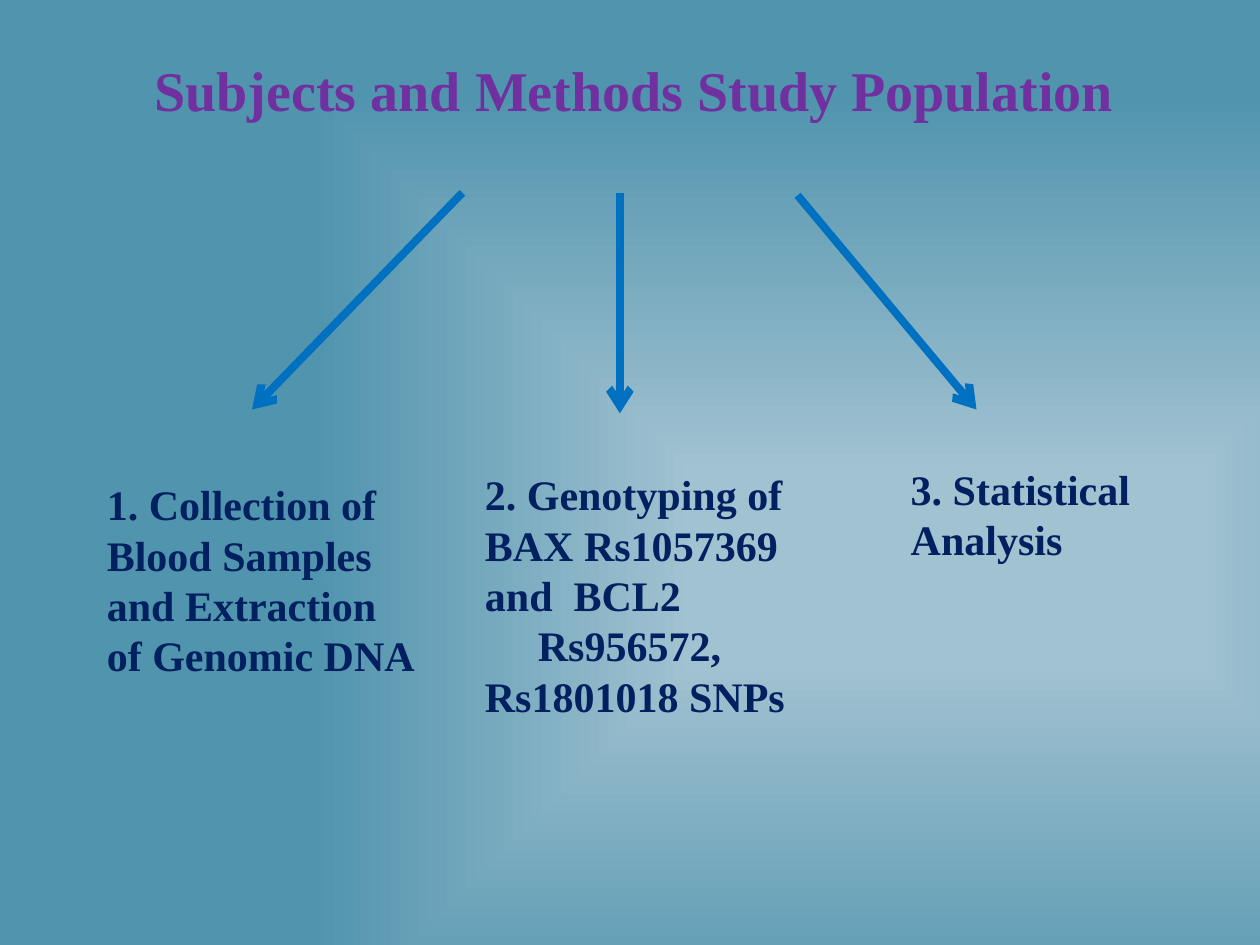
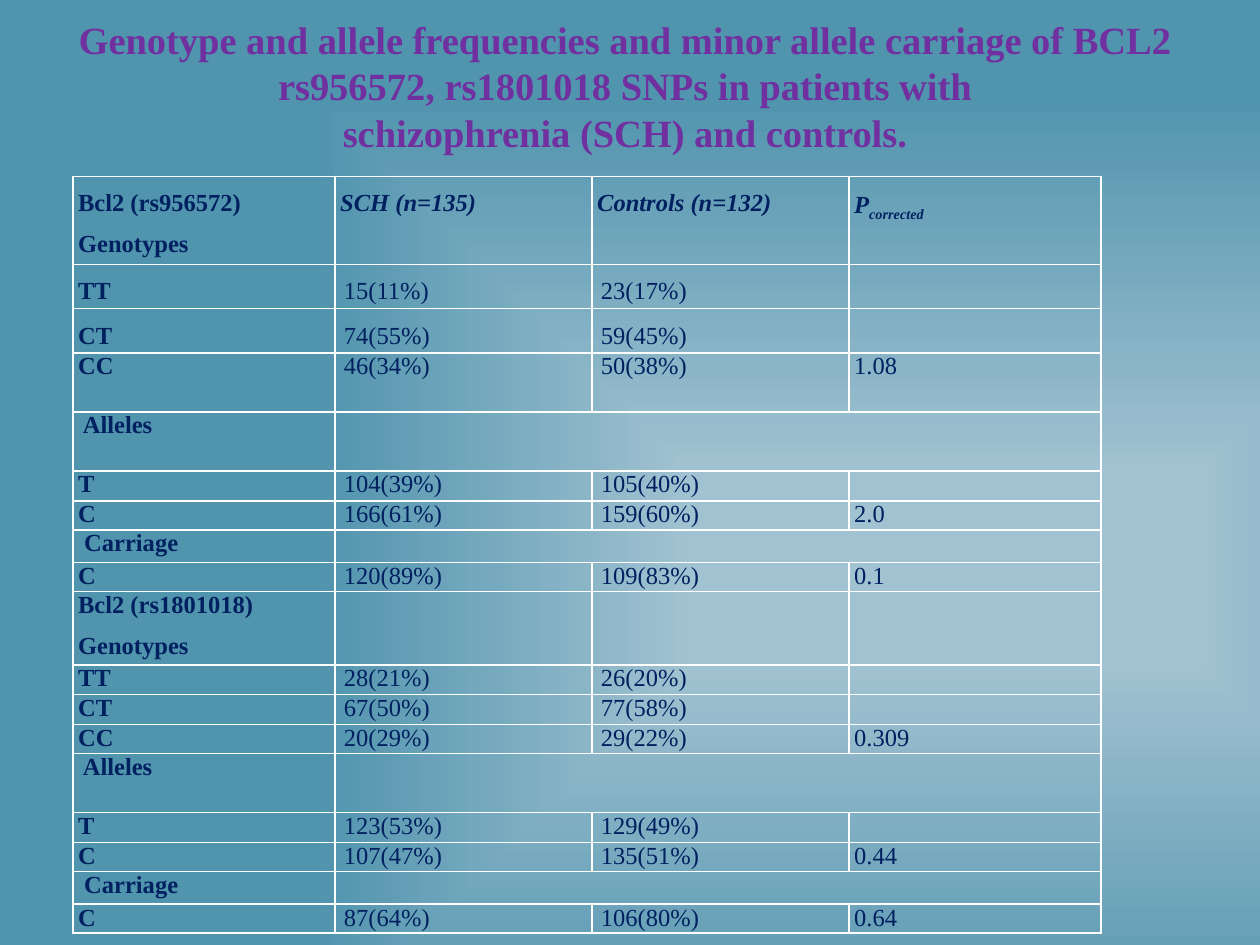
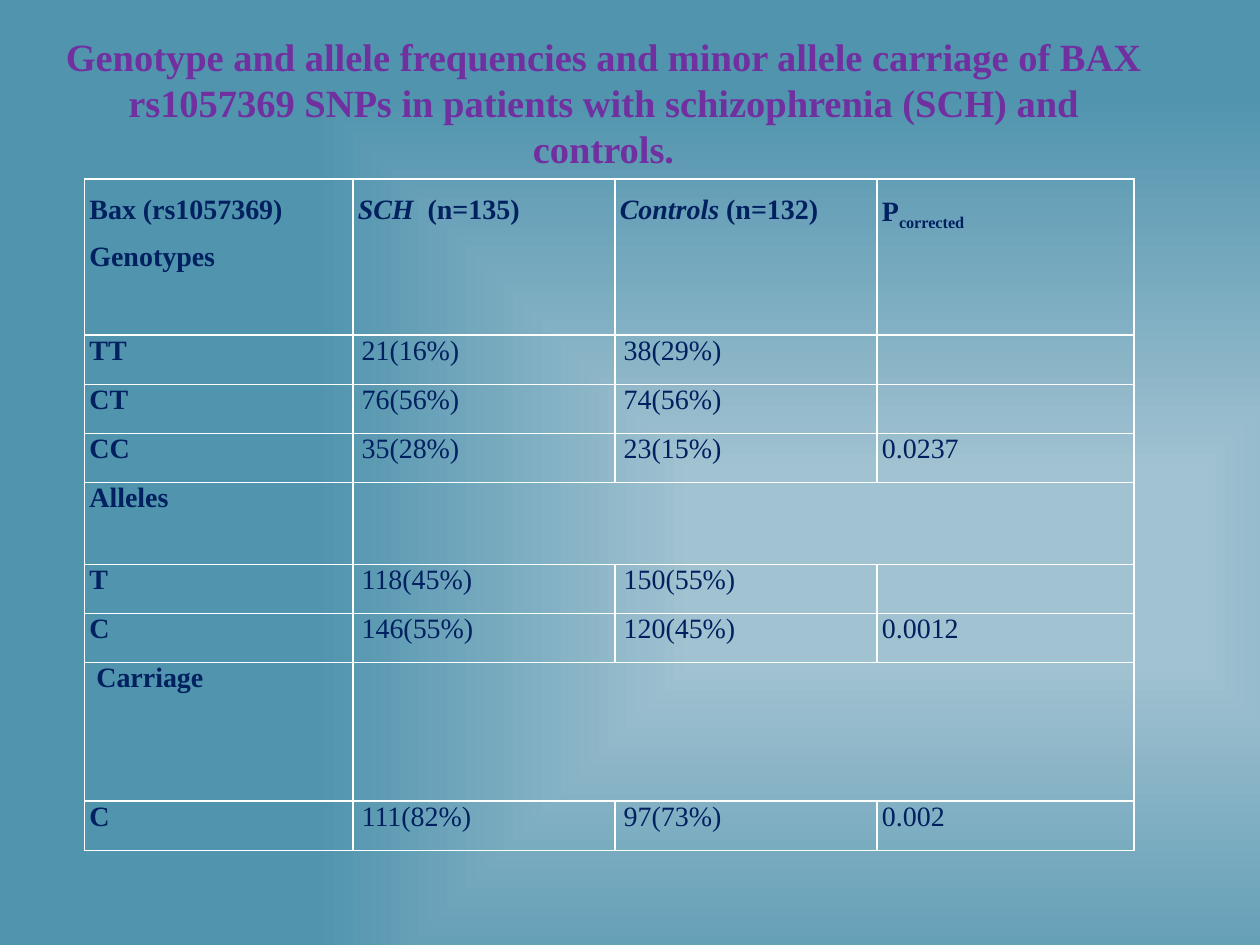
"""Build three slides on a genetic association study: methods and two frequency tables."""
from lxml.etree import SubElement
from pptx import Presentation
from pptx.dml.color import RGBColor
from pptx.enum.shapes import MSO_CONNECTOR
from pptx.enum.text import MSO_ANCHOR, PP_ALIGN
from pptx.oxml.ns import qn
from pptx.util import Inches, Pt

COLORS = {"title": "7030A0", "body": "002060", "arrow": "0070C0", "border": "FFFFFF",
          "light": "A1C2D1", "deep": "5194AE"}
FONT = "Times New Roman"
GRADIENT = [(0, "light"), (20, "light"), (100, "deep")]
ITALIC, SUBSCRIPT = {"italic": True}, {"baseline": -25}

METHODS_TITLE = "Subjects and Methods Study Population"
METHODS = [
    {"text": ["1. Collection of Blood Samples and Extraction of Genomic DNA"],
     "box": (0.75, 3.75, 2.67, 1.72), "arrow": (3.67, 1.53, 2, 3.25)},
    {"text": ["2. Genotyping of BAX Rs1057369 and  BCL2", "Rs956572, Rs1801018 SNPs"],
     "box": (3.75, 3.67, 2.92, 2.12), "arrow": (4.92, 1.53, 4.92, 3.28)},
    {"text": ["3. Statistical Analysis"],
     "box": (7.13, 3.63, 2.67, 1.31), "arrow": (6.33, 1.55, 7.75, 3.25)},
]

TABLES = [
    {"title": "Genotype and allele frequencies and minor allele carriage of BCL2 rs956572, "
              "rs1801018 SNPs in patients with\nschizophrenia (SCH) and controls.",
     "title_box": (0.17, 0.08, 9.58, 1.51), "origin": (0.58, 1.4),
     "columns": (2.08, 2.04, 2.04, 2), "size": 14, "loose_rows": 3,
     "rows": [
         (0.7, ["Bcl2 (rs956572)", "Genotypes"], [[("SCH (n=135)", ITALIC)]],
          [[("Controls (n=132)", ITALIC)]],
          [[("P", ITALIC), ("corrected", ITALIC | SUBSCRIPT)]]),
         (0.35, "TT", "15(11%)", "23(17%)", ""),
         (0.35, "CT", "74(55%)", "59(45%)", ""),
         (0.47, "CC", "46(34%)", "50(38%)", "1.08"),
         (0.47, " Alleles"),
         (0.23, "T", "104(39%)", "105(40%)", ""),
         (0.23, "C", "166(61%)", "159(60%)", "2.0"),
         (0.26, " Carriage"),
         (0.23, "C", "120(89%)", "109(83%)", "0.1"),
         (0.58, ["Bcl2 (rs1801018)", "Genotypes"], "", "", ""),
         (0.23, "TT", "28(21%)", "26(20%)", ""),
         (0.23, "CT", "67(50%)", "77(58%)", ""),
         (0.23, "CC", "20(29%)", "29(22%)", "0.309"),
         (0.47, " Alleles"),
         (0.23, "T", "123(53%)", "129(49%)", ""),
         (0.23, "C", "107(47%)", "135(51%)", "0.44"),
         (0.26, " Carriage"),
         (0.23, "C", "87(64%)", "106(80%)", "0.64"),
     ]},
    {"title": "Genotype and allele frequencies and minor allele carriage of BAX rs1057369 "
              "SNPs in patients with schizophrenia (SCH) and controls.",
     "title_box": (0.33, 0.21, 8.92, 1.58), "origin": (0.67, 1.42),
     "columns": (2.13, 2.08, 2.08, 2.04), "size": 16, "loose_rows": 1,
     "rows": [
         (1.24, ["Bax (rs1057369)", "Genotypes"], [[("SCH", ITALIC), ("  (n=135)", {})]],
          [[("Controls", ITALIC), (" (n=132)", {})]],
          [[("P", {}), ("corrected", SUBSCRIPT)]]),
         (0.39, "TT", "21(16%)", "38(29%)", ""),
         (0.39, "CT", "76(56%)", "74(56%)", ""),
         (0.39, "CC", "35(28%)", "23(15%)", "0.0237"),
         (0.65, "Alleles"),
         (0.39, "T", "118(45%)", "150(55%)", ""),
         (0.39, "C", "146(55%)", "120(45%)", "0.0012"),
         (1.1, " Carriage"),
         (0.39, "C", "111(82%)", "97(73%)", "0.002"),
     ]},
]


def color(name):
    return RGBColor.from_string(COLORS[name])


def paint_background(master):
    master.background.fill.gradient()
    gradient = master.element.find(".//" + qn("p:bgPr")).find(qn("a:gradFill"))
    for child in list(gradient):
        gradient.remove(child)
    stops = SubElement(gradient, qn("a:gsLst"))
    for position, name in GRADIENT:
        stop = SubElement(stops, qn("a:gs"), pos=str(position * 1000))
        SubElement(stop, qn("a:srgbClr"), val=COLORS[name])
    shade = SubElement(gradient, qn("a:path"), path="rect")
    SubElement(shade, qn("a:fillToRect"), l="50000", t="20000", r="0", b="0")


def write(frame, text, size=24, name="body", bold=True, align=PP_ALIGN.LEFT, spacings=(), indent=0):
    paragraphs = [text] if isinstance(text, str) else text
    for number, content in enumerate(paragraphs):
        paragraph = frame.add_paragraph() if number else frame.paragraphs[0]
        paragraph.alignment = align
        if number < len(spacings):
            paragraph.line_spacing = spacings[number]
            if spacings[number] > 1:
                paragraph.alignment = PP_ALIGN.JUSTIFY
        if number and indent:
            paragraph.alignment = align
            paragraph._p.get_or_add_pPr().set("indent", str(Inches(indent)))
        if not content:
            SubElement(paragraph._p, qn("a:endParaRPr"), sz=str(size * 100))
            continue
        if isinstance(content, str):
            content = [(content, {})]
        for words, extra in content:
            for line_number, line in enumerate(words.split("\n")):
                if line_number:
                    paragraph.add_line_break()
                run = paragraph.add_run()
                run.text = line
                run.font.name, run.font.size, run.font.bold = FONT, Pt(size), bold
                run.font.italic = extra.get("italic")
                run.font.color.rgb = color(name)
                if "baseline" in extra:
                    run.font._element.set("baseline", str(extra["baseline"] * 1000))


def add_text(slide, box, text, anchor=MSO_ANCHOR.TOP, **text_format):
    frame = slide.shapes.add_textbox(*map(Inches, box)).text_frame
    frame.word_wrap = True
    frame.vertical_anchor = anchor
    write(frame, text, **text_format)


def add_title(slide, box, text, size, anchor=MSO_ANCHOR.TOP):
    add_text(slide, box, text, anchor, size=size, name="title", align=PP_ALIGN.CENTER)


def add_arrow(slide, ends):
    arrow = slide.shapes.add_connector(MSO_CONNECTOR.STRAIGHT, *map(Inches, ends))
    arrow.line.color.rgb = color("arrow")
    arrow.line.width = Pt(4.5)
    properties = arrow.element.spPr
    SubElement(properties.find(qn("a:ln")), qn("a:tailEnd"), type="arrow")
    SubElement(properties, qn("a:effectLst"))


def style_cell(cell, margin):
    cell.margin_left = cell.margin_right = Inches(margin)
    cell.margin_top = cell.margin_bottom = 0
    properties = cell._tc.get_or_add_tcPr()
    for side in "LRTB":
        border = SubElement(properties, qn("a:ln" + side), w=str(Pt(1)))
        SubElement(SubElement(border, qn("a:solidFill")), qn("a:srgbClr"), val=COLORS["border"])
    cell.fill.background()


def add_frequency_table(slide, content):
    rows, columns = content["rows"], content["columns"]
    size = sum(columns), sum(row[0] for row in rows)
    table = slide.shapes.add_table(len(rows), len(columns),
                                   *map(Inches, content["origin"] + size)).table
    table.first_row = table.horz_banding = False
    for column, width in zip(table.columns, columns):
        column.width = Inches(width)
    for row_number, (height, *texts) in enumerate(rows):
        table.rows[row_number].height = Inches(height)
        first_spacing = 1.5 if row_number < content["loose_rows"] else 1
        is_section = len(texts) == 1
        for column_number in range(len(columns)):
            cell = table.cell(row_number, column_number)
            is_count = row_number > 0 and column_number in (1, 2)
            style_cell(cell, 0.07 if is_count else 0.04)
            write(cell.text_frame, texts[column_number] if column_number < len(texts) else "",
                  size=content["size"], bold=row_number == 0 or column_number == 0,
                  spacings=(first_spacing, 1.5))
        if is_section:
            table.cell(row_number, 1).merge(table.cell(row_number, len(columns) - 1))


def main():
    presentation = Presentation()
    presentation.slide_width, presentation.slide_height = Inches(10), Inches(7.5)
    paint_background(presentation.slide_master)
    blank = presentation.slide_layouts[6]

    slide = presentation.slides.add_slide(blank)
    add_title(slide, (1.08, 0.33, 7.91, 0.75), METHODS_TITLE, 32, MSO_ANCHOR.MIDDLE)
    for method in METHODS:
        add_arrow(slide, method["arrow"])
        add_text(slide, method["box"], method["text"], indent=0.42)

    for content in TABLES:
        slide = presentation.slides.add_slide(blank)
        add_frequency_table(slide, content)
        add_title(slide, content["title_box"], content["title"], 22)

    presentation.save("out.pptx")


if __name__ == "__main__":
    main()
